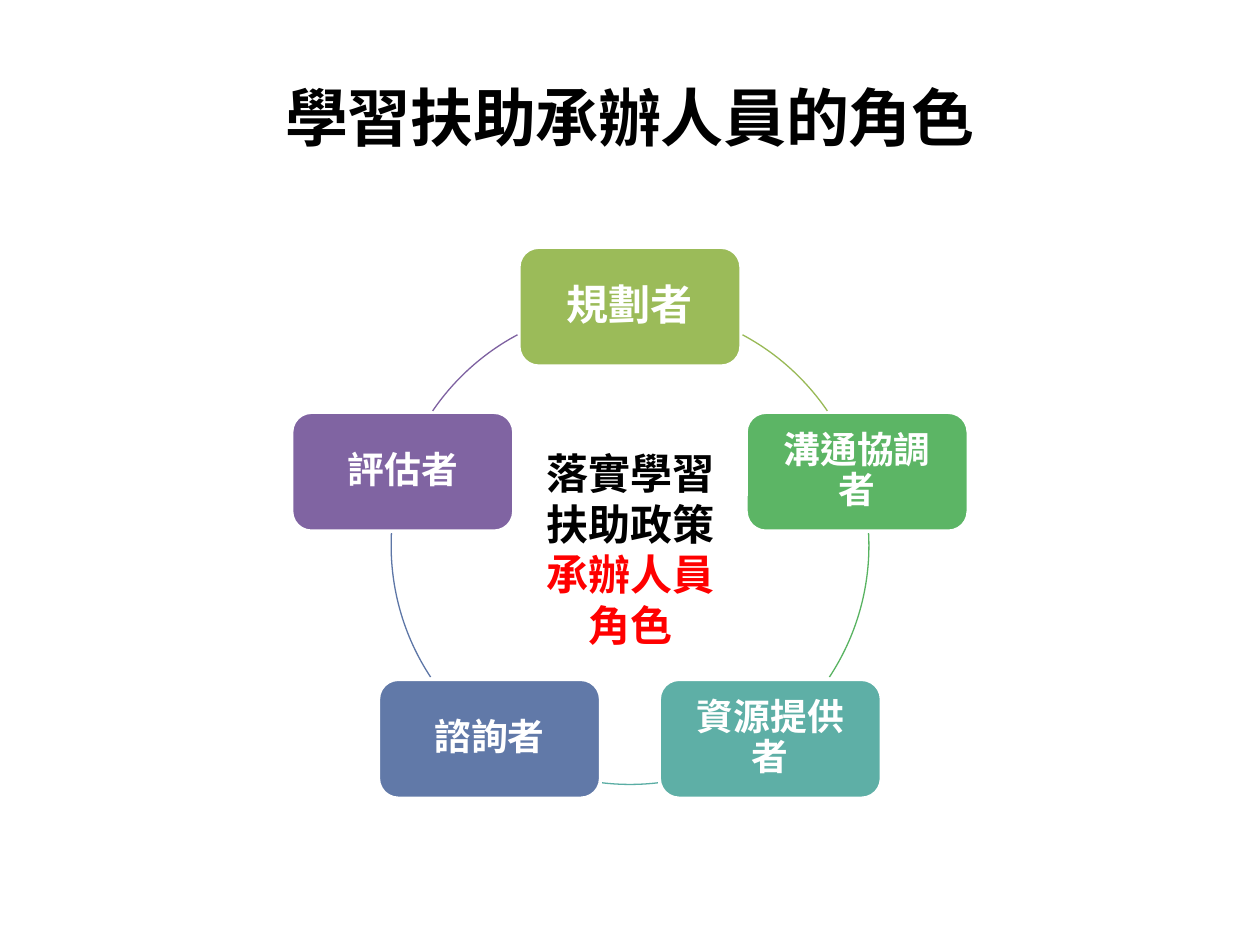
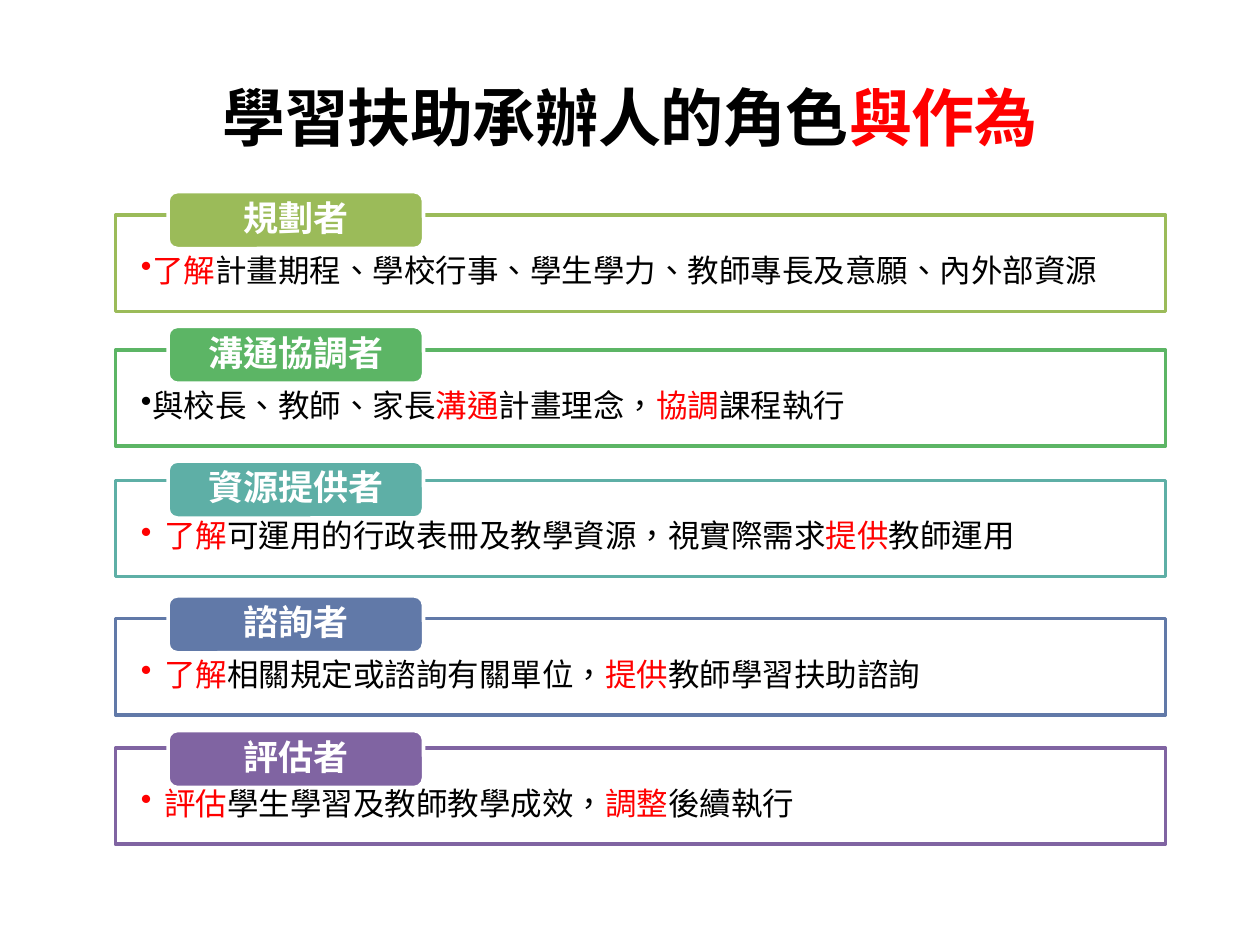
from math import cos, radians, sin

from lxml.etree import SubElement
from pptx import Presentation
from pptx.dml.color import RGBColor
from pptx.enum.shapes import MSO_SHAPE
from pptx.enum.text import MSO_ANCHOR, PP_ALIGN
from pptx.oxml.ns import qn
from pptx.util import Pt

WHITE = RGBColor(0xFF, 0xFF, 0xFF)
BLACK = RGBColor(0x00, 0x00, 0x00)
RED = RGBColor(0xFF, 0x00, 0x00)
GREEN = RGBColor(0x9B, 0xBB, 0x59)
EMERALD = RGBColor(0x5C, 0xB5, 0x65)
TEAL = RGBColor(0x5E, 0xAF, 0xA6)
BLUE = RGBColor(0x61, 0x79, 0xA8)
PURPLE = RGBColor(0x80, 0x64, 0xA2)
GREEN_ARC = RGBColor(0x98, 0xB9, 0x55)
EMERALD_ARC = RGBColor(0x58, 0xB3, 0x61)
TEAL_ARC = RGBColor(0x5A, 0xAD, 0xA4)
BLUE_ARC = RGBColor(0x5D, 0x76, 0xA6)
PURPLE_ARC = RGBColor(0x7D, 0x60, 0xA0)

HEADING_FONT = "Noto Sans CJK SC"
BODY_FONT = "Calibri"

# Role, colour
ROLES = [
    ("規劃者", GREEN),
    ("溝通協調者", EMERALD),
    ("資源提供者", TEAL),
    ("諮詢者", BLUE),
    ("評估者", PURPLE),
]

# Colour, start and end angle, clockwise from the right
ARCS = [
    (GREEN_ARC, 298.1, 325.7),
    (EMERALD_ARC, 357, 33.4),
    (TEAL_ARC, 83.3, 96.7),
    (BLUE_ARC, 146.6, 183),
    (PURPLE_ARC, 214.3, 241.9),
]

# Frame top, hanging indent, text runs
ACTIONS = [
    (123, 0, [("了解", RED),
              ("計畫期程、學校行事、學生學力、教師專長及意願、內外部資源", BLACK)]),
    (200, 0, [("與校長、教師、家長", BLACK), ("溝通", RED), ("計畫理念，", BLACK),
              ("協調", RED), ("課程執行", BLACK)]),
    (274.5, 13.5, [("了解", RED), ("可運用的行政表冊及教學資源，視實際需求", BLACK),
                   ("提供", RED), ("教師運用", BLACK)]),
    (353.5, 13.5, [("了解", RED), ("相關規定或諮詢有關單位，", BLACK),
                   ("提供", RED), ("教師學習扶助諮詢", BLACK)]),
    (427.5, 13.5, [("評估", RED), ("學生學習及教師教學成效，", BLACK),
                   ("調整", RED), ("後續執行", BLACK)]),
]


class Deck:
    """Holds the presentation, its text style and the slide being filled."""

    def __init__(self):
        self.presentation = Presentation()
        self.presentation.slide_width = Pt(720)
        self.presentation.slide_height = Pt(540)
        self.slide = None

    def add_slide(self, title_runs):
        layout = self.presentation.slide_layouts[6]
        self.slide = self.presentation.slides.add_slide(layout)
        text_frame = self.add_text_box(36, 44.5, 648, 44)
        text_frame.vertical_anchor = MSO_ANCHOR.MIDDLE
        paragraph = text_frame.paragraphs[0]
        paragraph.alignment = PP_ALIGN.CENTER
        self.add_runs(paragraph, title_runs, 36, HEADING_FONT, True)
        for run in paragraph.runs:
            run._r.get_or_add_rPr().set("spc", "-20")

    def add_runs(self, paragraph, runs, size, font_name, bold=False):
        for text, color in runs:
            run = paragraph.add_run()
            run.text = text
            run.font.size = Pt(size)
            run.font.name = font_name
            run.font.bold = bold
            run.font.color.rgb = color
            properties = run._r.get_or_add_rPr()
            properties.set("lang", "zh-TW")
            SubElement(properties, qn("a:ea")).set("typeface", font_name)

    def set_margins(self, text_frame, left, top, right, bottom):
        text_frame.margin_left, text_frame.margin_top = Pt(left), Pt(top)
        text_frame.margin_right, text_frame.margin_bottom = Pt(right), Pt(bottom)

    def add_text_box(self, left, top, width, height):
        box = self.slide.shapes.add_textbox(Pt(left), Pt(top), Pt(width), Pt(height))
        text_frame = box.text_frame
        text_frame.word_wrap = True
        self.set_margins(text_frame, 0, 0, 0, 0)
        return text_frame

    def add_shape(self, kind, left, top, width, height, fill, line, line_width=2):
        shape = self.slide.shapes.add_shape(
            kind, Pt(left), Pt(top), Pt(width), Pt(height))
        shape.shadow.inherit = False
        if fill is None:
            shape.fill.background()
        else:
            shape.fill.solid()
            shape.fill.fore_color.rgb = fill
        shape.line.color.rgb = line
        shape.line.width = Pt(line_width)
        return shape

    def add_role(self, role, color, left, top, width, height, size, margins):
        shape = self.add_shape(
            MSO_SHAPE.ROUNDED_RECTANGLE, left, top, width, height, color, WHITE)
        text_frame = shape.text_frame
        text_frame.word_wrap = True
        text_frame.vertical_anchor = MSO_ANCHOR.MIDDLE
        self.set_margins(text_frame, *margins)
        paragraph = text_frame.paragraphs[0]
        paragraph.alignment = PP_ALIGN.CENTER
        paragraph.line_spacing = 0.9
        self.add_runs(paragraph, [(role, WHITE)], size, BODY_FONT, True)

    def add_arc(self, color, center_x, center_y, radius, start, end):
        arc = self.add_shape(
            MSO_SHAPE.ARC, center_x - radius, center_y - radius,
            2 * radius, 2 * radius, None, color, 0.75)
        # One degree is 60000 units; an adjustment of 1 is 100000 units.
        arc.adjustments[0] = start * 0.6
        arc.adjustments[1] = end * 0.6

    def add_action(self, top, indent, runs, color):
        frame = self.add_shape(
            MSO_SHAPE.RECTANGLE, 66, top, 600, 55, WHITE, color)
        text_frame = frame.text_frame
        text_frame.word_wrap = True
        text_frame.vertical_anchor = MSO_ANCHOR.TOP
        self.set_margins(text_frame, 14.5, 23, 14.5, 10)
        paragraph = text_frame.paragraphs[0]
        paragraph.alignment = PP_ALIGN.LEFT
        paragraph.line_spacing = 0.9
        properties = paragraph._p.get_or_add_pPr()
        properties.set("marL", str(Pt(indent)))
        properties.set("indent", str(-Pt(indent)))
        bullet_color = SubElement(properties, qn("a:buClr"))
        SubElement(bullet_color, qn("a:srgbClr")).set("val", str(runs[0][1]))
        SubElement(properties, qn("a:buChar")).set("char", "•")
        self.add_runs(paragraph, runs, 18, BODY_FONT)


def build_role_cycle(deck):
    deck.add_slide([("學習扶助承辦人員的角色", BLACK)])
    center_x, center_y, radius = 360, 311.75, 136.5
    box_width, box_height = 127, 68
    for index, (role, color) in enumerate(ROLES):
        angle = radians(72 * index - 90)
        left = center_x + radius * cos(angle) - box_width / 2
        top = center_y + radius * sin(angle) - box_height / 2
        size = 24 if index == 0 else 21
        deck.add_role(role, color, left, top, box_width, box_height, size, [9.5] * 4)
    for color, start, end in ARCS:
        deck.add_arc(color, center_x, center_y, radius, start, end)

    text_frame = deck.add_text_box(304.5, 250, 111.5, 124)
    text_frame.word_wrap = False
    deck.set_margins(text_frame, 7.2, 6, 7.2, 2)
    lines = [("落實學習", BLACK), ("扶助政策", BLACK), ("承辦人員", RED), ("角色", RED)]
    for index, line in enumerate(lines):
        paragraph = text_frame.add_paragraph() if index else text_frame.paragraphs[0]
        paragraph.alignment = PP_ALIGN.CENTER
        paragraph.line_spacing = Pt(28.8)
        deck.add_runs(paragraph, [line], 24, HEADING_FONT, True)


def build_role_actions(deck):
    deck.add_slide([("學習扶助承辦人的角色", BLACK), ("與作為", RED)])
    for index, ((role, color), action) in enumerate(zip(ROLES, ACTIONS)):
        deck.add_action(*action, color)
        deck.add_role(role, color, 96, 109.5 + 77 * index, 146, 32.5, 20,
                      [18, 0, 18, 0])


def main():
    deck = Deck()
    build_role_cycle(deck)
    build_role_actions(deck)
    deck.presentation.save("out.pptx")


if __name__ == "__main__":
    main()
